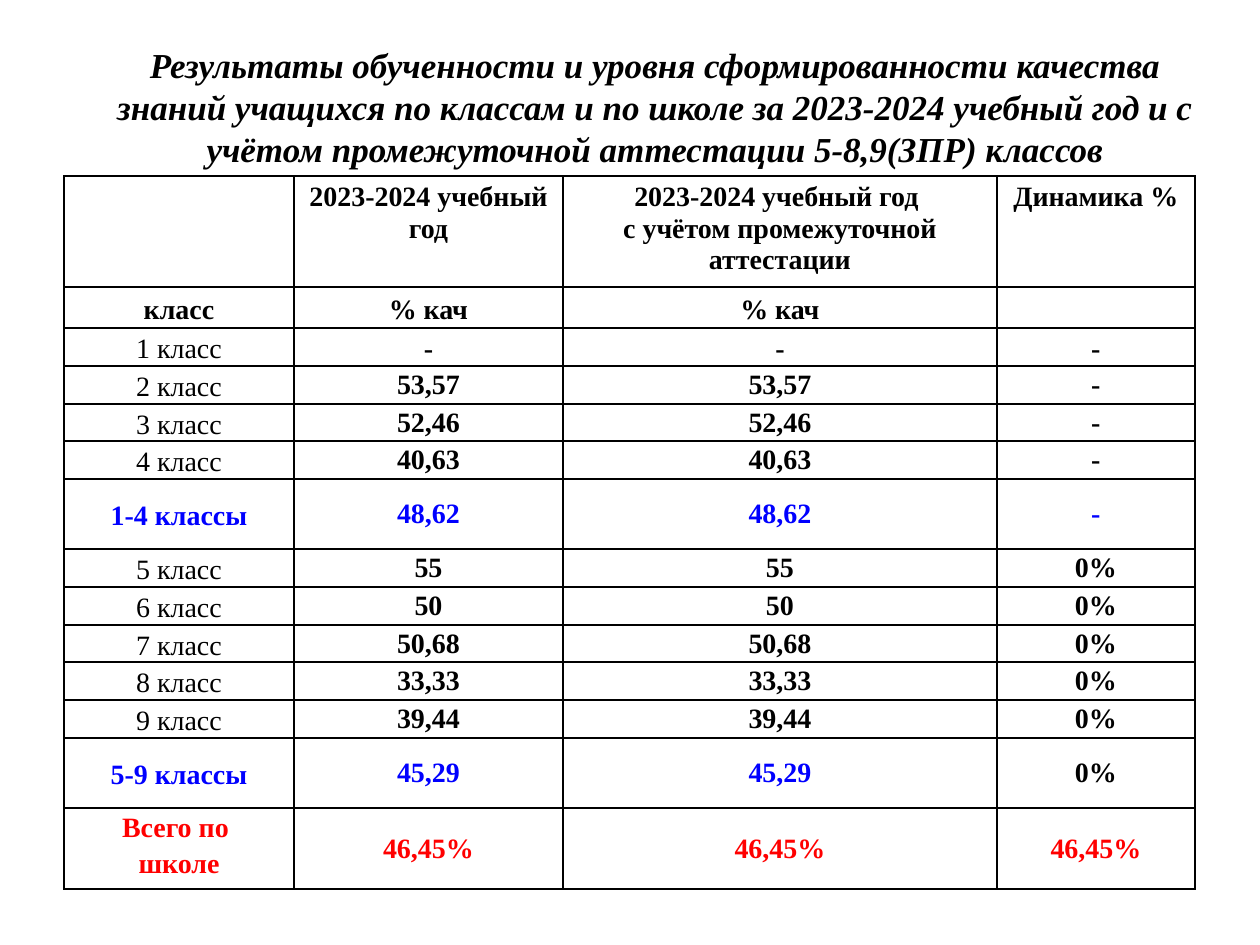
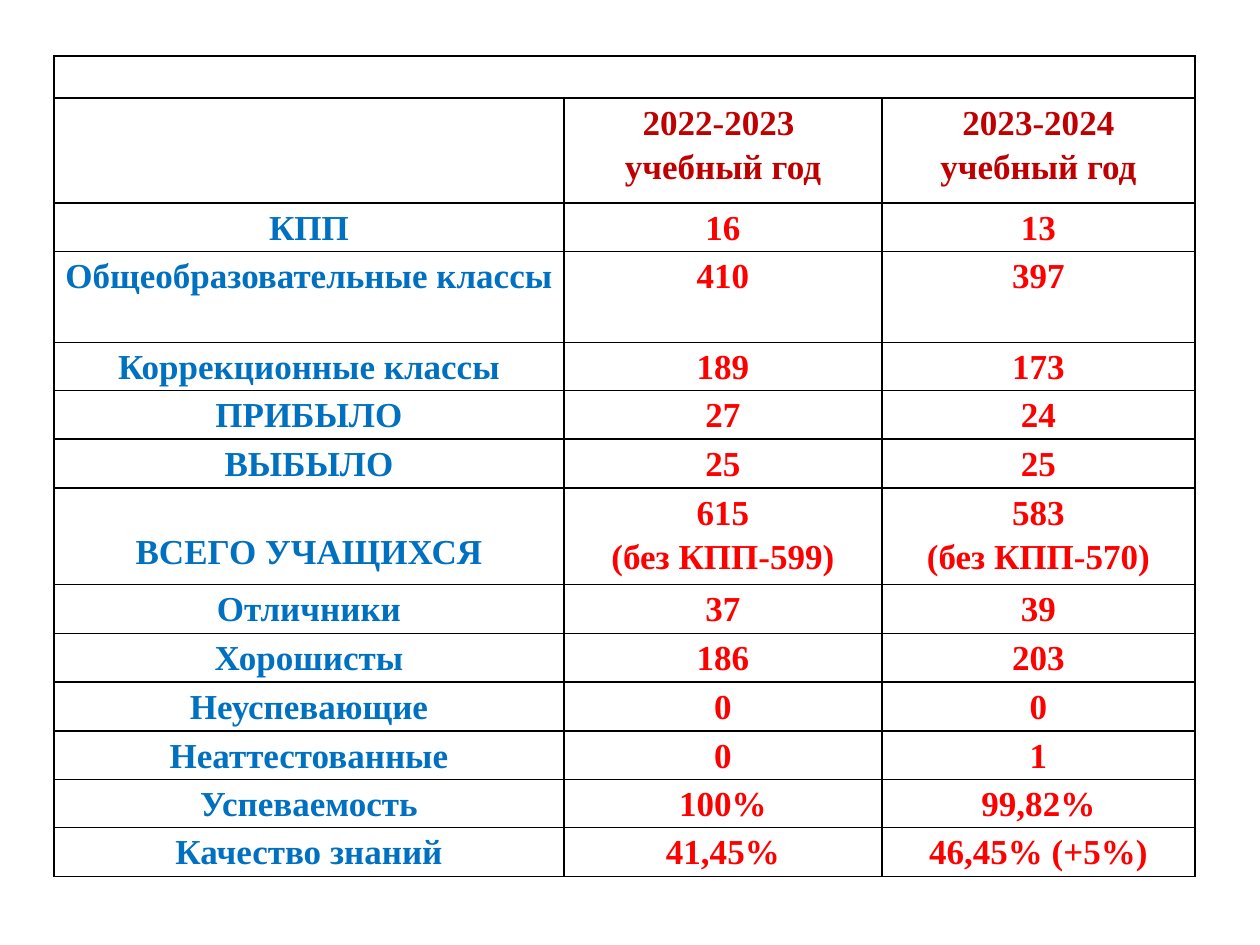
from lxml import etree
from pptx import Presentation
from pptx.dml.color import RGBColor
from pptx.enum.text import MSO_ANCHOR, MSO_AUTO_SIZE, PP_ALIGN
from pptx.oxml.ns import qn
from pptx.util import Pt

CENTER = PP_ALIGN.CENTER
TOP, MIDDLE = MSO_ANCHOR.TOP, MSO_ANCHOR.MIDDLE
FIT_SHAPE = MSO_AUTO_SIZE.SHAPE_TO_FIT_TEXT

PX = 914400 / 126
FONT = "Times New Roman"
COLORS = {
    "white": "FFFFFF",
    "black": "000000",
    "blue": "0000FF",
    "red": "FF0000",
    "dark red": "C00000",
    "label blue": "0070C0",
}
LOOSE = 1.15
DEFAULT_INSETS = (13, 6, 13, 6)
SIDE_INSETS = (9, 0, 9, 0)
THIN_INSETS = (1, 1, 1, 0)

TITLE = (
    "Результаты обученности и уровня сформированности качества знаний учащихся "
    "по классам и по школе за 2023-2024 учебный год и с учётом промежуточной "
    "аттестации 5-8,9(ЗПР) классов"
)
TITLE_BOX = (84, 37, 1142, 140)

# Each row: height in px, then its cells
QUALITY_AT = (64, 176)
QUALITY_COLUMNS = (230, 269, 434, 198)
QUALITY_ROWS = [
    (111, "", "2023-2024 учебный год",
     "2023-2024 учебный год \nс учётом промежуточной аттестации", "Динамика %"),
    (41, "класс", "% кач", "% кач", ""),
    (38, "1 класс", "-", "-", "-"),
    (38, "2 класс", "53,57", "53,57", "-"),
    (37, "3 класс", "52,46", "52,46", "-"),
    (38, "4 класс", "40,63", "40,63", "-"),
    (70, "1-4 классы", "48,62", "48,62", "-"),
    (38, "5 класс", "55", "55", "0%"),
    (38, "6 класс", "50", "50", "0%"),
    (37, "7 класс", "50,68", "50,68", "0%"),
    (38, "8 класс", "33,33", "33,33", "0%"),
    (38, "9 класс", "39,44", "39,44", "0%"),
    (70, "5-9 классы", "45,29", "45,29", "0%"),
    (81, "Всего по \nшколе", "46,45%", "46,45%", "46,45%"),
]

PUPILS_AT = (54, 56)
PUPILS_COLUMNS = (510, 318, 313)
PUPILS_ROWS = [
    (42, "", "", ""),
    (105, "", "2022-2023 \nучебный год", "2023-2024 учебный год"),
    (48, "КПП", "16", "13"),
    (91, "Общеобразовательные классы", "410", "397"),
    (48, "Коррекционные классы", "189", "173"),
    (48, "ПРИБЫЛО", "27", "24"),
    (49, "ВЫБЫЛО", "25", "25"),
    (96, "ВСЕГО УЧАЩИХСЯ", "615\n(без КПП-599)", "583\n(без КПП-570)"),
    (49, "Отличники", "37", "39"),
    (48, "Хорошисты", "186", "203"),
    (49, "Неуспевающие", "0", "0"),
    (48, "Неаттестованные", "0", "1"),
    (48, "Успеваемость", "100%", "99,82%"),
    (49, "Качество знаний", "41,45%", "46,45% (+5%)"),
]
TOTAL_LABEL_DROP = 39


def emu(px):
    return round(px * PX)


def format_text(frame, size, color, bold=True, italic=False, spacing=None):
    for paragraph in frame.paragraphs:
        paragraph.alignment = CENTER
        if spacing:
            paragraph.line_spacing = spacing
        for span in paragraph.runs:
            font = span.font
            font.name, font.size = FONT, Pt(size)
            font.bold, font.italic = bold, italic
            font.color.rgb = RGBColor.from_string(COLORS[color])


def draw_borders(cell):
    properties = cell._tc.get_or_add_tcPr()
    for position, side in enumerate(("lnL", "lnR", "lnT", "lnB")):
        line = etree.Element(qn(f"a:{side}"), w=str(Pt(1)))
        fill = etree.SubElement(line, qn("a:solidFill"))
        etree.SubElement(fill, qn("a:srgbClr"), val=COLORS["black"])
        properties.insert(position, line)


def fill_cell(cell, text, size, insets, anchor, **style):
    cell.fill.solid()
    cell.fill.fore_color.rgb = RGBColor.from_string(COLORS["white"])
    draw_borders(cell)
    (cell.margin_left, cell.margin_top,
     cell.margin_right, cell.margin_bottom) = map(emu, insets)
    cell.vertical_anchor = anchor
    if text:
        cell.text_frame.text = text
        format_text(cell.text_frame, size, **style)
    else:
        # A small end mark keeps an empty cell from stretching its row
        paragraph = cell.text_frame.paragraphs[0]._p
        etree.SubElement(paragraph, qn("a:endParaRPr"), sz="1200")


def add_grid(slide, corner, columns, rows, size, style_for):
    """Add a table; style_for(row, column, text) gives the look of a cell."""
    heights = [row[0] for row in rows]
    frame = slide.shapes.add_table(
        len(rows), len(columns), *map(emu, (*corner, sum(columns), sum(heights))))
    table = frame.table
    table.first_row = table.horz_banding = False
    for column, width in zip(table.columns, columns):
        column.width = emu(width)
    for row_index, (height, *texts) in enumerate(rows):
        table.rows[row_index].height = emu(height)
        for column_index, text in enumerate(texts):
            fill_cell(table.cell(row_index, column_index), text, size,
                      **style_for(row_index, column_index, text))
    return table


def quality_style(row, column, text):
    label = QUALITY_ROWS[row][1]
    if row == 0:
        return dict(insets=DEFAULT_INSETS, anchor=TOP, color="black")
    color = "black"
    if label.startswith("Всего"):
        color = "red"
    elif label.endswith("классы") and text != "0%":
        color = "blue"
    return dict(
        insets=THIN_INSETS if row > 3 and column else SIDE_INSETS,
        anchor=TOP if "\n" in text else MIDDLE,
        color=color,
        bold=not text.endswith(" класс"),
        spacing=LOOSE if column == 0 or row < 3 else None,
    )


def pupils_style(row, column, text):
    color = "dark red" if row == 1 else "red" if column else "label blue"
    left, top, right, bottom = SIDE_INSETS
    if text == "ВСЕГО УЧАЩИХСЯ":
        top = TOTAL_LABEL_DROP
    return dict(insets=(left, top, right, bottom), anchor=TOP,
                color=color, spacing=LOOSE)


def add_title(slide):
    box = slide.shapes.add_textbox(*map(emu, TITLE_BOX))
    frame = box.text_frame
    frame.word_wrap = True
    frame.auto_size = FIT_SHAPE
    frame.text = TITLE
    format_text(frame, 20, "black", italic=True)


def main():
    deck = Presentation()
    deck.slide_width, deck.slide_height = emu(1260), emu(945)
    blank = deck.slide_layouts[6]

    quality = deck.slides.add_slide(blank)
    add_grid(quality, QUALITY_AT, QUALITY_COLUMNS, QUALITY_ROWS, 16, quality_style)
    add_title(quality)

    pupils = deck.slides.add_slide(blank)
    table = add_grid(pupils, PUPILS_AT, PUPILS_COLUMNS, PUPILS_ROWS, 20, pupils_style)
    table.cell(0, 0).merge(table.cell(0, len(PUPILS_COLUMNS) - 1))

    deck.save("out.pptx")


if __name__ == "__main__":
    main()
